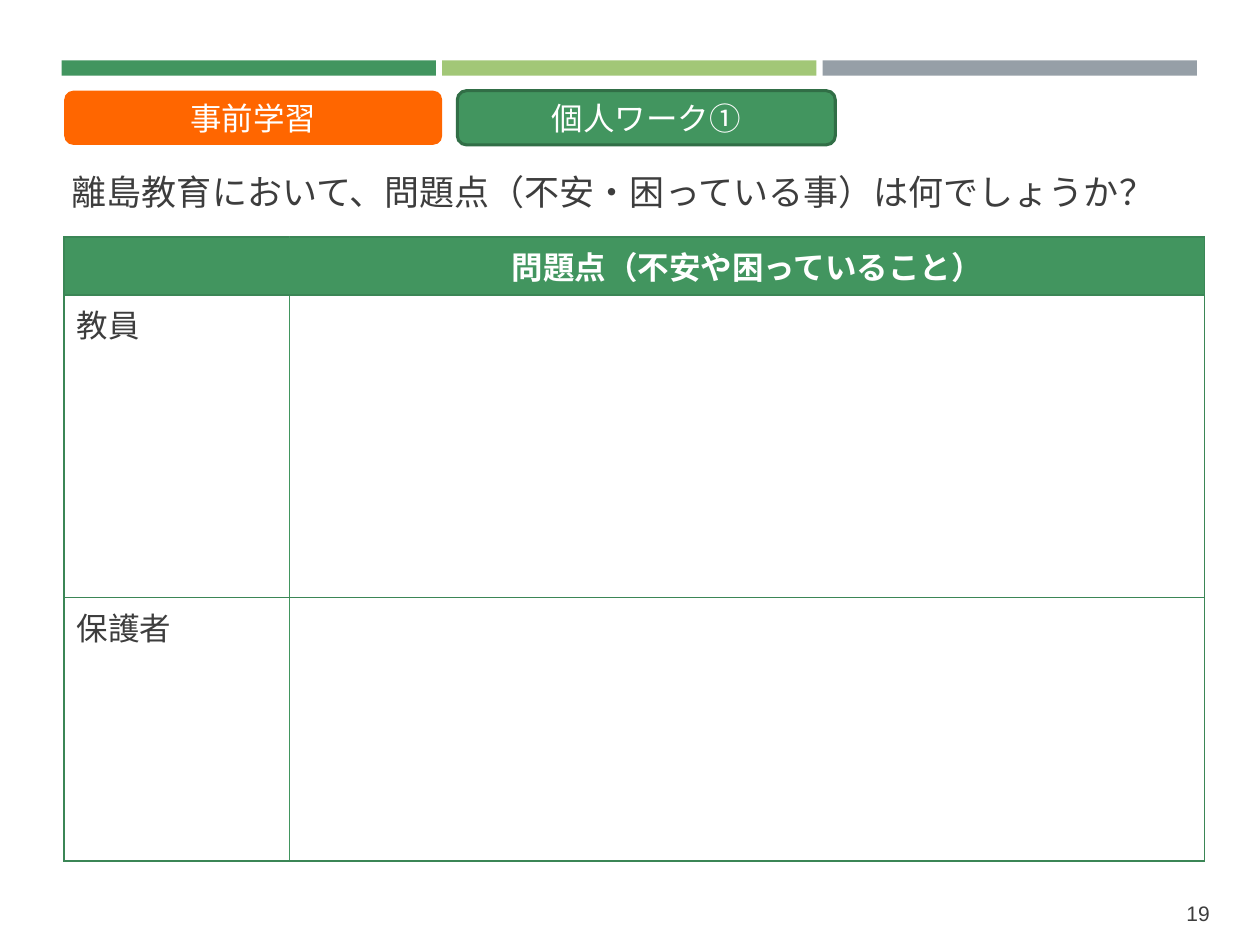
from lxml.etree import SubElement
from pptx import Presentation
from pptx.dml.color import RGBColor
from pptx.enum.shapes import MSO_SHAPE
from pptx.enum.text import MSO_ANCHOR, MSO_AUTO_SIZE, PP_ALIGN
from pptx.oxml.ns import qn
from pptx.util import Inches, Pt

GREEN, EDGE, DARK, WHITE = "42955F", "3B8656", "3D3D3D", "FFFFFF"

# Content
QUESTION = "離島教育において、問題点（不安・困っている事）は何でしょうか？"
BARS = [GREEN, "A2C777", "969FA7"]
LABELS = [("事前学習", 0.51, "FF6600", None), ("個人ワーク①", 3.63, GREEN, "316E46")]
ROWS = [("", "問題点（不安や困っていること）"), ("教員", ""), ("保護者", "")]
COL_WIDTHS = [1.79, 7.26]
ROW_HEIGHTS = [0.42, 2.4, 2.09]
PAGE = "19"


def rgb(color):
    return RGBColor.from_string(color)


def style(p, size, color, align=PP_ALIGN.LEFT, font="Calibri", bold=False):
    p.alignment = align
    p.font.size = Pt(size)
    p.font.name = font
    p.font.bold = bold
    p.font.color.rgb = rgb(color)


def add_block(kind, x, y, w, h, fill, line=None):
    sp = s.shapes.add_shape(kind, Inches(x), Inches(y), Inches(w), Inches(h))
    sp.shadow.inherit = False
    sp.fill.solid()
    sp.fill.fore_color.rgb = rgb(fill)
    if line:
        sp.line.color.rgb = rgb(line)
        sp.line.width = Pt(1.75)
    else:
        sp.line.fill.background()
    return sp


def set_borders(cell, colors):
    """Draw 1 pt borders; colors are in the order left, right, top, bottom."""
    tc_pr = cell._tc.get_or_add_tcPr()
    for i, (side, color) in enumerate(zip("LRTB", colors)):
        ln = SubElement(tc_pr, qn(f"a:ln{side}"), w=str(Pt(1)))
        fill = SubElement(ln, qn("a:solidFill"))
        SubElement(fill, qn("a:srgbClr"), val=color)
        tc_pr.insert(i, ln)


prs = Presentation()
prs.slide_width, prs.slide_height = Inches(10), Inches(7.5)
s = prs.slides.add_slide(prs.slide_layouts[5])

# Colour bars along the top
for i, color in enumerate(BARS):
    add_block(MSO_SHAPE.RECTANGLE, 0.49 + i * 3.02, 0.48, 2.97, 0.12, color)

# Question as the title
title = s.shapes.title
title.left, title.top = Inches(0.47), Inches(1.3)
title.width, title.height = Inches(9.06), Inches(0.43)
tf = title.text_frame
tf.text = QUESTION
tf.word_wrap = True
tf.auto_size = MSO_AUTO_SIZE.NONE
tf.vertical_anchor = MSO_ANCHOR.TOP
style(tf.paragraphs[0], 20, DARK)

# Labels
for text, x, fill, line in LABELS:
    sp = add_block(MSO_SHAPE.ROUNDED_RECTANGLE, x, 0.72, 3, 0.43, fill, line)
    tf = sp.text_frame
    tf.text = text
    tf.vertical_anchor = MSO_ANCHOR.MIDDLE
    style(tf.paragraphs[0], 18, WHITE, PP_ALIGN.CENTER)

# Worksheet table
table = s.shapes.add_table(
    len(ROWS), len(COL_WIDTHS), Inches(0.51), Inches(1.88),
    Inches(sum(COL_WIDTHS)), Inches(sum(ROW_HEIGHTS))).table
for col, width in zip(table.columns, COL_WIDTHS):
    col.width = Inches(width)
for row, height in zip(table.rows, ROW_HEIGHTS):
    row.height = Inches(height)
for r, texts in enumerate(ROWS):
    header = r == 0
    for c, text in enumerate(texts):
        cell = table.cell(r, c)
        cell.text = text
        style(cell.text_frame.paragraphs[0], 18, WHITE if header else DARK,
              PP_ALIGN.CENTER if header else PP_ALIGN.LEFT, bold=header)
        cell.fill.solid()
        cell.fill.fore_color.rgb = rgb(GREEN if header else WHITE)
        sides = (EDGE, GREEN) if c == 0 else (GREEN, EDGE)
        set_borders(cell, (*sides, EDGE, EDGE))

# Page number
box = s.shapes.add_textbox(Inches(8.86), Inches(7.1), Inches(0.84), Inches(0.4))
tf = box.text_frame
tf.word_wrap = True
tf.text = PAGE
style(tf.paragraphs[0], 12, DARK, PP_ALIGN.RIGHT, "Arial")

prs.save("out.pptx")
